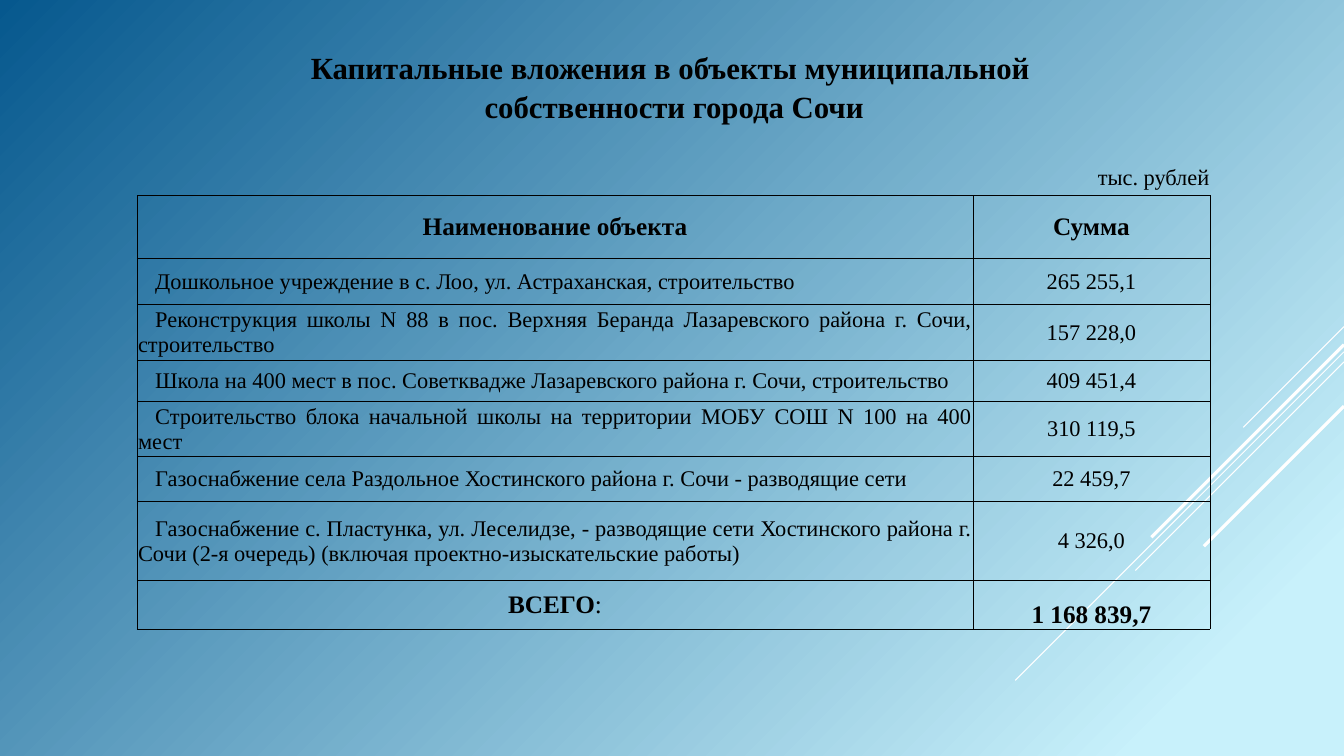
from pptx import Presentation
from pptx.dml.color import RGBColor
from pptx.enum.text import MSO_ANCHOR as Anchor, PP_ALIGN as Align
from pptx.oxml import parse_xml
from pptx.oxml.ns import nsdecls
from pptx.util import Inches, Pt
from lxml.etree import SubElement

FONT = "Times New Roman"
COLORS = {"text": "000000", "border": "000000", "line": "FFFFFF",
          "light": "C8F1FB", "deep": "06588E"}
TITLE = ["Капитальные вложения в объекты муниципальной ", "собственности города Сочи"]
UNIT = "тыс. рублей"
HEADER = ("Наименование объекта", "Сумма")
OBJECTS = [
    ("Дошкольное учреждение в с. Лоо, ул. Астраханская, строительство", "265 255,1"),
    ("Реконструкция школы N 88 в пос. Верхняя Беранда Лазаревского района г. Сочи, "
     "строительство", "157 228,0"),
    ("Школа на 400 мест в пос. Советквадже Лазаревского района г. Сочи, строительство",
     "409 451,4"),
    ("Строительство блока начальной школы на территории МОБУ СОШ N 100 на 400 мест",
     "310 119,5"),
    ("Газоснабжение села Раздольное Хостинского района г. Сочи - разводящие сети",
     "22 459,7"),
    ("Газоснабжение с. Пластунка, ул. Леселидзе, - разводящие сети Хостинского района "
     "г. Сочи (2-я очередь) (включая проектно-изыскательские работы)", "4 326,0"),
]
TOTAL = ("ВСЕГО", "1 168 839,7")
COLUMN_WIDTHS = [8.29, 2.35]
ROW_HEIGHTS = [0.62, 0.46, 0.55, 0.41, 0.55, 0.44, 0.79, 0.48]
SLIDE_WIDTH = 13.33
DIAGONALS = [(3.24, 1.0, 0.75), (3.49, 3.26, 0.75), (3.59, 2.07, 0.75),
             (3.42, 1.91, 2.25), (4.03, 1.39, 2.25)]


def style(para, size, bold=False, align=Align.CENTER):
    para.alignment = align
    para.font.name = FONT
    para.font.size = Pt(size)
    para.font.bold = bold
    para.font.color.rgb = RGBColor.from_string(COLORS["text"])


def paint_background(page):
    page._element.cSld.insert(0, parse_xml(
        f'<p:bg {nsdecls("p", "a")}><p:bgPr><a:gradFill rotWithShape="1"><a:gsLst>'
        f'<a:gs pos="10000"><a:srgbClr val="{COLORS["light"]}"/></a:gs>'
        f'<a:gs pos="100000"><a:srgbClr val="{COLORS["deep"]}"/></a:gs></a:gsLst>'
        '<a:path path="circle"><a:fillToRect l="100000" t="100000"/></a:path>'
        '</a:gradFill><a:effectLst/></p:bgPr></p:bg>'))


def add_diagonal(page, top, span, width):
    line = page.shapes.add_connector(
        1, Inches(SLIDE_WIDTH), Inches(top), Inches(SLIDE_WIDTH - span), Inches(top + span))
    line.line.color.rgb = RGBColor.from_string(COLORS["line"])
    line.line.width = Pt(width)
    SubElement(line._element.spPr, "{http://schemas.openxmlformats.org/drawingml/2006/main}effectLst")


def add_text(page, left, top, width, height, lines, size, bold, align, spacing):
    box = page.shapes.add_textbox(Inches(left), Inches(top), Inches(width), Inches(height))
    frame = box.text_frame
    frame.word_wrap = True
    frame.text = "\n".join(lines)
    for para in frame.paragraphs:
        style(para, size, bold, align)
        para.line_spacing = spacing


def format_cell(cell):
    cell.margin_left = cell.margin_top = cell.margin_right = Inches(0.01)
    cell.margin_bottom = 0
    cell.vertical_anchor = Anchor.MIDDLE
    properties = cell._tc.get_or_add_tcPr()
    for side in ("lnL", "lnR", "lnT", "lnB"):
        properties.append(parse_xml(
            f'<a:{side} {nsdecls("a")} w="{Pt(0.5)}"><a:solidFill>'
            f'<a:srgbClr val="{COLORS["border"]}"/></a:solidFill></a:{side}>'))
    cell.fill.background()


def add_objects_table(page):
    rows = [HEADER, *OBJECTS, TOTAL]
    table = page.shapes.add_table(
        len(rows), len(HEADER), Inches(1.36), Inches(1.94),
        Inches(sum(COLUMN_WIDTHS)), Inches(sum(ROW_HEIGHTS))).table
    table.first_row = table.horz_banding = False
    for column, width in zip(table.columns, COLUMN_WIDTHS):
        column.width = Inches(width)
    for row, height in zip(table.rows, ROW_HEIGHTS):
        row.height = Inches(height)
    for r, row in enumerate(rows):
        strong = row in (HEADER, TOTAL)
        for c, text in enumerate(row):
            cell = table.cell(r, c)
            format_cell(cell)
            cell.text = text
            para = cell.text_frame.paragraphs[0]
            justified = c == 0 and not strong
            style(para, 18 if strong else 16, strong,
                  Align.JUSTIFY if justified else Align.CENTER)
            if justified:
                para._p.get_or_add_pPr().set("indent", str(Inches(0.17)))
    label, amount = table.rows[len(rows) - 1].cells
    colon = label.text_frame.paragraphs[0].add_run()
    colon.text = ":"
    colon.font.bold = False
    amount.vertical_anchor = Anchor.BOTTOM


def main():
    deck = Presentation()
    deck.slide_width, deck.slide_height = Inches(SLIDE_WIDTH), Inches(7.5)
    page = deck.slides.add_slide(deck.slide_layouts[6])
    paint_background(page)
    for diagonal in DIAGONALS:
        add_diagonal(page, *diagonal)
    add_text(page, 1.21, 0.42, 10.95, 0.84, TITLE, 22, True, Align.CENTER, 1.05)
    add_objects_table(page)
    add_text(page, 10.79, 1.57, 1.65, 0.37, [UNIT], 16, False, Align.LEFT, 1.0)
    deck.save("out.pptx")


if __name__ == "__main__":
    main()
